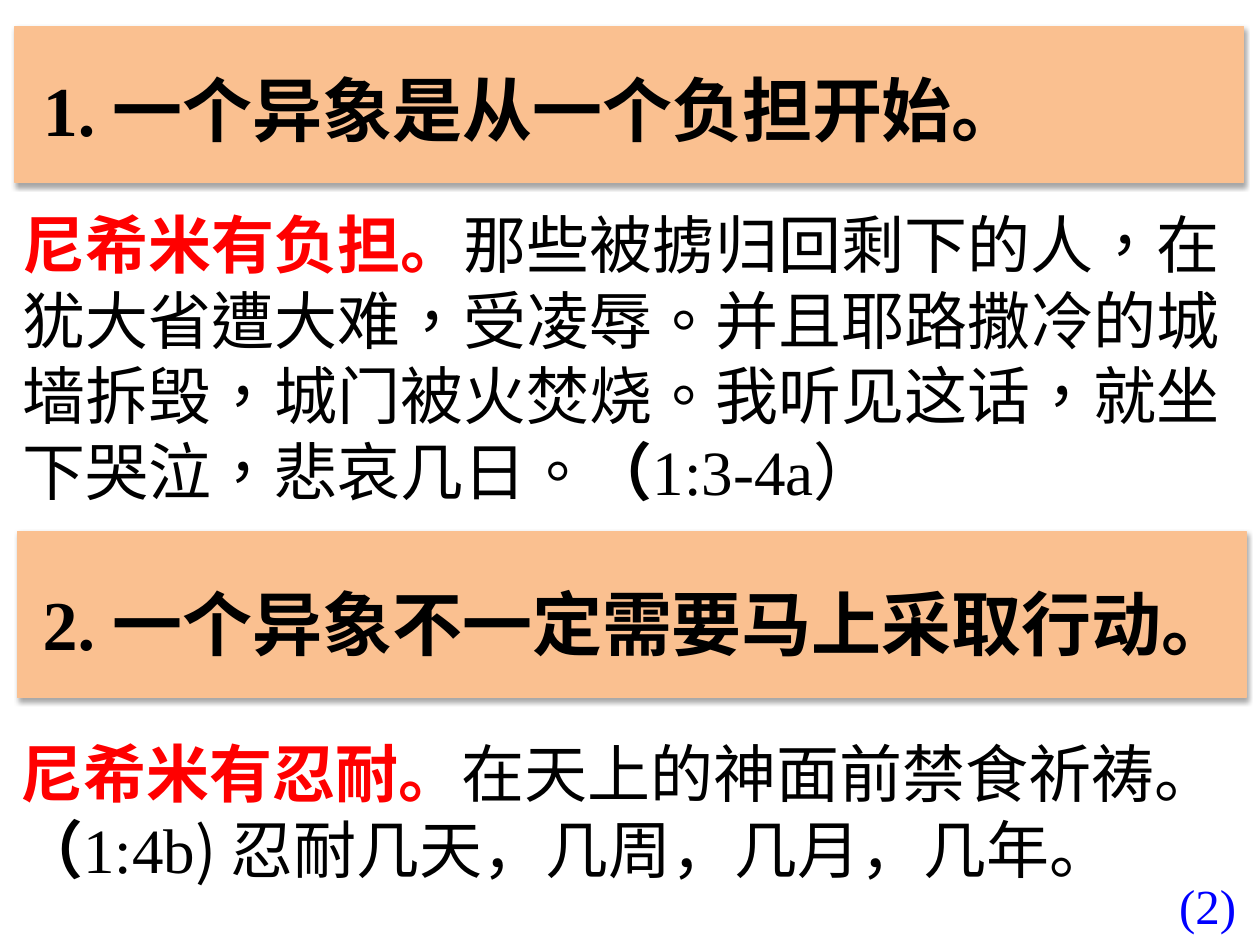
from dataclasses import dataclass

from lxml import etree
from pptx import Presentation
from pptx.dml.color import RGBColor
from pptx.enum.lang import MSO_LANGUAGE_ID
from pptx.enum.shapes import MSO_SHAPE
from pptx.enum.text import MSO_ANCHOR, MSO_AUTO_SIZE, PP_ALIGN
from pptx.oxml import parse_xml
from pptx.oxml.ns import nsdecls, qn
from pptx.util import Pt

RECTANGLE = MSO_SHAPE.RECTANGLE
TOP = MSO_ANCHOR.TOP
NO_AUTOFIT = MSO_AUTO_SIZE.NONE
LEFT = PP_ALIGN.LEFT
SIMPLIFIED = MSO_LANGUAGE_ID.SIMPLIFIED_CHINESE
TRADITIONAL = MSO_LANGUAGE_ID.TRADITIONAL_CHINESE

BLACK = RGBColor(0x00, 0x00, 0x00)
RED = RGBColor(0xFF, 0x00, 0x00)
BLUE = RGBColor(0x00, 0x00, 0xFF)
PEACH = RGBColor(0xFA, 0xC0, 0x90)

CHINESE_FONT = "Noto Sans CJK SC"
LATIN_FONT = "Times New Roman"
LINE_HEIGHT = 1.2  # multiple of the text size
SHADOW = (
    f'<a:effectLst {nsdecls("a")}>'
    '<a:outerShdw blurRad="39370" dist="22860" dir="5400000" rotWithShape="0">'
    '<a:srgbClr val="000000"><a:alpha val="35000"/></a:srgbClr>'
    "</a:outerShdw></a:effectLst>"
)


@dataclass
class Box:
    left: float
    top: float
    width: float
    height: float

    def lengths(self) -> tuple:
        return Pt(self.left), Pt(self.top), Pt(self.width), Pt(self.height)


@dataclass
class Phrase:
    text: str
    font: str = CHINESE_FONT
    color: RGBColor = BLACK
    bold: bool = False
    language: MSO_LANGUAGE_ID = SIMPLIFIED


@dataclass
class TextBlock:
    box: Box
    size: float
    phrases: list
    top_inset: float = 6.5


def heading(top: float, number: str, text: str) -> TextBlock:
    phrases = [Phrase(number, LATIN_FONT, bold=True), Phrase(text, bold=True)]
    return TextBlock(Box(17.3, top, 715, 55.4), 40, phrases)


BANNERS = [Box(8.6, 15.1, 702, 89.3), Box(10.1, 303.8, 702, 95)]

FIRST_HEADING = heading(31.7, "1. ", "一个异象是从一个负担开始。")
SECOND_HEADING = heading(325.4, "2. ", "一个异象不一定需要马上采取行动。")

FIRST_PASSAGE = TextBlock(Box(5.8, 110.9, 712, 181.4), 36, [
    Phrase("尼希米有负担。", color=RED, bold=True),
    Phrase("那些被掳归回剩下的人，在犹大省遭大难，受凌辱。并且耶路撒冷的城墙拆毁，"
           "城门被火焚烧。我听见这话，就坐下哭泣，悲哀几日。", language=TRADITIONAL),
    Phrase("（", bold=True),
    Phrase("1:3-4a）", LATIN_FONT),
])
SECOND_PASSAGE = TextBlock(Box(4.3, 413.3, 735, 94.3), 36, [
    Phrase("尼希米有忍耐。", color=RED, bold=True),
    Phrase("在天上的神面前禁食祈祷。"),
    Phrase("（", bold=True),
    Phrase("1:4b", LATIN_FONT),
    Phrase(") 忍耐几天，几周，几月，几年。"),
])
PAGE_NUMBER = TextBlock(Box(666.7, 496.8, 86.4, 41), 28,
                        [Phrase("(2)", LATIN_FONT, BLUE)], top_inset=3.6)


def set_attributes(target, values: dict) -> None:
    for name, value in values.items():
        setattr(target, name, value)


def add_banner(slide, box: Box) -> None:
    shape = slide.shapes.add_shape(RECTANGLE, *box.lengths())
    shape.fill.solid()
    shape.fill.fore_color.rgb = PEACH
    shape.line.color.rgb = PEACH
    shape.line.width = Pt(0.75)
    shape._element.spPr.append(parse_xml(SHADOW))
    # Banners lie behind the placeholders
    slide.shapes._spTree.insert(2, shape._element)


def write_text(shape, block: TextBlock) -> None:
    left, top, width, height = block.box.lengths()
    set_attributes(shape, {"left": left, "top": top, "width": width, "height": height})
    frame = shape.text_frame
    set_attributes(frame, {
        "word_wrap": True, "auto_size": NO_AUTOFIT, "vertical_anchor": TOP,
        "margin_left": Pt(7.2), "margin_right": Pt(7.2),
        "margin_top": Pt(block.top_inset), "margin_bottom": Pt(3.6),
    })
    paragraph = frame.paragraphs[0]
    set_attributes(paragraph, {
        "alignment": LEFT, "space_before": Pt(0), "space_after": Pt(0),
        "line_spacing": Pt(block.size * LINE_HEIGHT),
    })
    # No bullet or indent
    properties = paragraph._p.get_or_add_pPr()
    properties.set("marL", "0")
    properties.set("indent", "0")
    etree.SubElement(properties, qn("a:buNone"))
    for phrase in block.phrases:
        run = paragraph.add_run()
        run.text = phrase.text
        set_attributes(run.font, {
            "size": Pt(block.size), "bold": phrase.bold,
            "name": phrase.font, "language_id": phrase.language,
        })
        run.font.color.rgb = phrase.color
        east_asian = etree.SubElement(run._r.get_or_add_rPr(), qn("a:ea"))
        east_asian.set("typeface", CHINESE_FONT)


def main() -> None:
    presentation = Presentation()
    presentation.slide_width = Pt(720)
    presentation.slide_height = Pt(540)
    slide = presentation.slides.add_slide(presentation.slide_layouts[3])

    for box in BANNERS:
        add_banner(slide, box)

    # Title and both passages
    placeholders = slide.placeholders
    write_text(slide.shapes.title, FIRST_HEADING)
    write_text(placeholders[1], FIRST_PASSAGE)
    write_text(placeholders[2], SECOND_PASSAGE)

    # Second heading and page number
    for block in (SECOND_HEADING, PAGE_NUMBER):
        write_text(slide.shapes.add_textbox(*block.box.lengths()), block)

    presentation.save("out.pptx")


if __name__ == "__main__":
    main()
